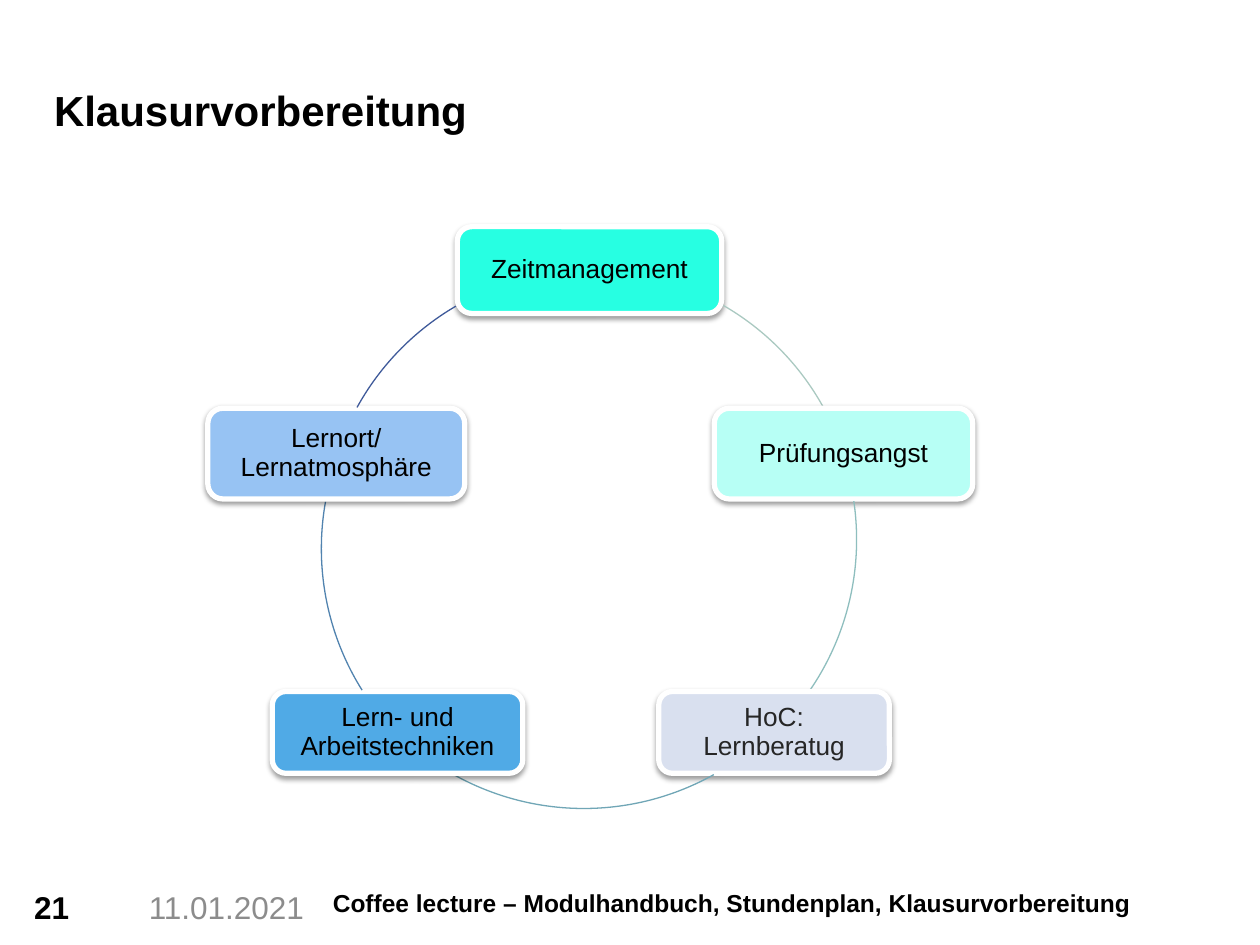
from typing import NamedTuple

from lxml.etree import SubElement
from pptx import Presentation
from pptx.dml.color import RGBColor
from pptx.enum.shapes import MSO_SHAPE as Shape
from pptx.enum.text import MSO_ANCHOR as Anchor, PP_ALIGN as Align
from pptx.oxml.ns import qn
from pptx.util import Cm, Pt

BLACK = RGBColor(0x00, 0x00, 0x00)
DARK = RGBColor(0x26, 0x26, 0x26)
GREY = RGBColor(0x8C, 0x8C, 0x8C)
WHITE = RGBColor(0xFF, 0xFF, 0xFF)
AQUA = RGBColor(0x27, 0xFF, 0xE2)
MINT = RGBColor(0xB7, 0xFF, 0xF5)
LAVENDER = RGBColor(0xD9, 0xE0, 0xEF)
BLUE = RGBColor(0x50, 0xAA, 0xE6)
SKY = RGBColor(0x97, 0xC3, 0xF3)
ARC_SAGE = RGBColor(0xAA, 0xC9, 0xC1)
ARC_TEAL = RGBColor(0x8E, 0xBE, 0xBE)
ARC_SEA = RGBColor(0x70, 0xA6, 0xB6)
ARC_STEEL = RGBColor(0x51, 0x83, 0xAF)
ARC_NAVY = RGBColor(0x3F, 0x5A, 0x9A)

FONT = "Arial"
RADIUS = 5.37
FOOTER_TOP = 17.91


class Node(NamedTuple):
    lines: tuple[str, ...]
    box: tuple[float, float, float, float]  # left, top, width, height in cm
    fill: RGBColor
    color: RGBColor = BLACK


class Arc(NamedTuple):
    center: tuple[float, float]  # cm
    start: float  # degrees, clockwise from the right
    end: float
    color: RGBColor


class Label(NamedTuple):
    text: str
    box: tuple[float, float, float, float]
    size: int
    bold: bool = True
    color: RGBColor = BLACK
    anchor: Anchor = Anchor.TOP


# Each topic is followed by the arc leading on from it
CYCLE = [
    (Node(("Zeitmanagement",), (9.22, 4.57, 5.33, 1.75), AQUA),
     Arc((11.9, 10.81), 300, 331, ARC_SAGE)),
    (Node(("Prüfungsangst",), (14.4, 8.23, 5.21, 1.83), MINT),
     Arc((11.9, 10.88), 351.7, 34.3, ARC_TEAL)),
    (Node(("HoC: Lernberatug",), (13.28, 13.94, 4.65, 1.65), LAVENDER, DARK),
     Arc((11.77, 10.93), 60.8, 119.2, ARC_SEA)),
    (Node(("Lern- und Arbeitstechniken",), (5.49, 13.94, 5.05, 1.65), BLUE),
     Arc((11.85, 11.06), 147.9, 190.2, ARC_STEEL)),
    (Node(("Lernort/", "Lernatmosphäre"), (4.19, 8.23, 5.18, 1.83), SKY),
     Arc((11.9, 10.81), 208.9, 239.7, ARC_NAVY)),
]

LABELS = [
    Label("Klausurvorbereitung", (1.09, 1.17, 18.62, 1.55), 24, anchor=Anchor.BOTTOM),
    Label("21", (0.69, FOOTER_TOP, 1.8, 1), 18),
    Label("11.01.2021", (3, FOOTER_TOP, 3.51, 1), 18, False, GREY),
    Label("Coffee lecture – Modulhandbuch, Stundenplan, Klausurvorbereitung",
          (6.71, FOOTER_TOP, 18.39, 1), 14),
]


def prepare_frame(tf, inset: float, anchor: Anchor) -> None:
    tf.word_wrap = True
    tf.margin_left = tf.margin_right = tf.margin_top = tf.margin_bottom = Cm(inset)
    tf.vertical_anchor = anchor


def add_run(p, text: str, size: int, color: RGBColor, bold: bool = False) -> None:
    r = p.add_run()
    r.text = text
    r.font.name, r.font.size, r.font.bold = FONT, Pt(size), bold
    r.font.color.rgb = color


def add_soft_shadow(sp) -> None:
    sp.shadow.inherit = False
    effects = sp._element.spPr.find(qn("a:effectLst"))
    outer = SubElement(effects, qn("a:outerShdw"), blurRad=str(Pt(3.1)),
                       dist=str(Pt(1.6)), dir="5400000", rotWithShape="0")
    color = SubElement(outer, qn("a:srgbClr"), val=str(BLACK))
    SubElement(color, qn("a:alpha"), val="38000")


def draw_node(s, node: Node) -> None:
    sp = s.shapes.add_shape(Shape.ROUNDED_RECTANGLE, *map(Cm, node.box))
    sp.fill.solid()
    sp.fill.fore_color.rgb = node.fill
    sp.line.color.rgb = WHITE
    sp.line.width = Pt(3)
    add_soft_shadow(sp)
    prepare_frame(sp.text_frame, 0.25, Anchor.MIDDLE)
    p = sp.text_frame.paragraphs[0]
    p.alignment = Align.CENTER
    p.line_spacing = 0.9
    for i, line in enumerate(node.lines):
        if i:
            p.add_line_break()
        add_run(p, line, 15, node.color)


def draw_arc(s, arc: Arc) -> None:
    x, y = arc.center
    sp = s.shapes.add_shape(Shape.ARC, Cm(x - RADIUS), Cm(y - RADIUS),
                            Cm(2 * RADIUS), Cm(2 * RADIUS))
    # Angles are stored in 1/60000 degree, adjustments in 1/100000
    sp.adjustments[0] = arc.start * 0.6
    sp.adjustments[1] = arc.end * 0.6
    sp.shadow.inherit = False
    sp.fill.background()
    sp.line.color.rgb = arc.color
    sp.line.width = Pt(0.75)


def draw_label(s, label: Label) -> None:
    tf = s.shapes.add_textbox(*map(Cm, label.box)).text_frame
    prepare_frame(tf, 0, label.anchor)
    add_run(tf.paragraphs[0], label.text, label.size, label.color, label.bold)


def main() -> None:
    prs = Presentation()
    prs.slide_width, prs.slide_height = Cm(25.4), Cm(19.05)
    s = prs.slides.add_slide(prs.slide_layouts[6])

    # Title and footer
    for label in LABELS:
        draw_label(s, label)

    # Cycle of topics
    for node, arc in CYCLE:
        draw_node(s, node)
        draw_arc(s, arc)

    prs.save("out.pptx")


if __name__ == "__main__":
    main()
